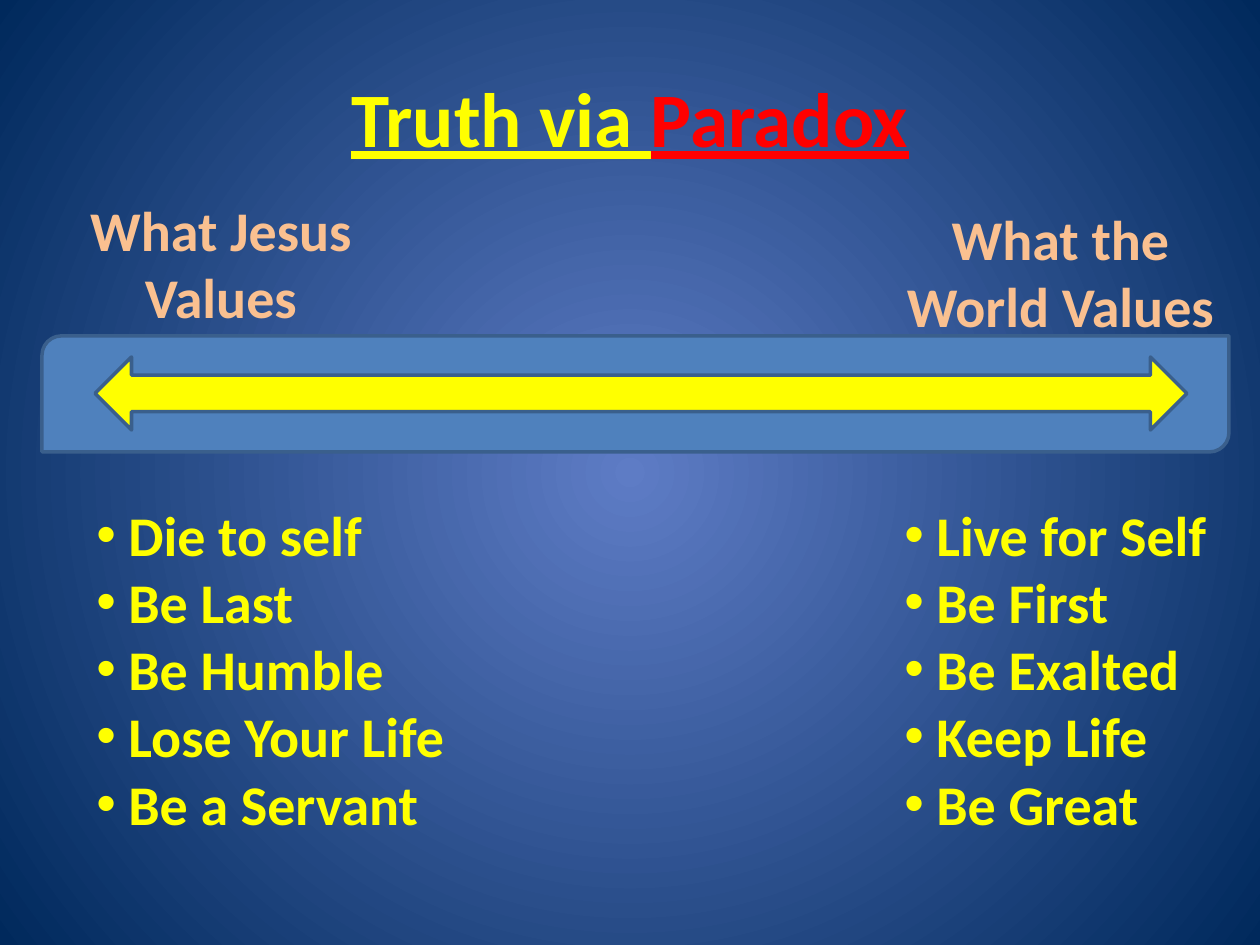
"""Build the slide that contrasts two sets of values along a double arrow."""
import dataclasses

import lxml.etree
import pptx
import pptx.dml.color
import pptx.enum.shapes
import pptx.enum.text
import pptx.oxml.ns
import pptx.util

EMU_PER_INCH = 914400
PX_PER_INCH = 126
FONT = "Calibri"
YELLOW, RED, PEACH = "FFFF00", "FF0000", "FAC090"
BLUE, EDGE, BLACK = "4F81BD", "3A5F8C", "000000"
GLOW, NAVY = "5E7CC5", "00295C"
BULLET_INDENT = 32

MSO_SHAPE = pptx.enum.shapes.MSO_SHAPE
ALIGN = pptx.enum.text.PP_ALIGN


@dataclasses.dataclass(frozen=True)
class Box:
    left: int
    top: int
    width: int
    height: int


@dataclasses.dataclass(frozen=True)
class Bar:
    kind: MSO_SHAPE
    box: Box
    fill: str


@dataclasses.dataclass(frozen=True)
class TextBlock:
    box: Box
    lines: tuple[str, ...]
    color: str
    bulleted: bool


BARS = (
    Bar(MSO_SHAPE.ROUND_2_DIAG_RECTANGLE, Box(42, 336, 1187, 116), BLUE),
    Bar(MSO_SHAPE.LEFT_RIGHT_ARROW, Box(95, 357, 1092, 73), YELLOW),
)
TEXT_BLOCKS = (
    TextBlock(
        Box(84, 494, 473, 352),
        ("Die to self", "Be Last", "Be Humble", "Lose Your Life", "Be a Servant"),
        YELLOW,
        True,
    ),
    TextBlock(
        Box(892, 494, 431, 391),
        ("Live for Self", "Be First", "Be Exalted", "Keep Life", "Be Great"),
        YELLOW,
        True,
    ),
    TextBlock(Box(32, 189, 378, 149), ("What Jesus Values",), PEACH, False),
    TextBlock(Box(882, 198, 357, 149), ("What the World Values",), PEACH, False),
)


def emu(px: int) -> pptx.util.Emu:
    return pptx.util.Emu(round(px * EMU_PER_INCH / PX_PER_INCH))


def place(box: Box) -> tuple[pptx.util.Emu, ...]:
    return tuple(emu(length) for length in dataclasses.astuple(box))


def rgb(color: str) -> pptx.dml.color.RGBColor:
    return pptx.dml.color.RGBColor.from_string(color)


def add_element(parent, tag: str, **attributes: str):
    return lxml.etree.SubElement(parent, pptx.oxml.ns.qn(tag), attributes)


def paint_background(slide) -> None:
    fill = slide.background.fill
    fill.gradient()
    for stop, color in zip(fill.gradient_stops, (GLOW, NAVY)):
        stop.color.rgb = rgb(color)
    linear = next(slide.element.iter(pptx.oxml.ns.qn("a:lin")))
    gradient = linear.getparent()
    gradient.remove(linear)
    circle = add_element(gradient, "a:path", path="circle")
    add_element(circle, "a:fillToRect", l="50000", t="50000", r="50000", b="50000")


def add_run(paragraph, text: str, size: int, color: str, underline: bool = False) -> None:
    run = paragraph.add_run()
    run.text = text
    font = run.font
    font.name, font.size, font.bold = FONT, pptx.util.Pt(size), True
    font.color.rgb = rgb(color)
    if underline:
        font.underline = True
    properties = run._r.get_or_add_rPr()
    outline = add_element(properties, "a:ln", w=str(pptx.util.Pt(0.75)))
    add_element(add_element(outline, "a:solidFill"), "a:srgbClr", val=BLACK)
    properties.insert(0, outline)


def add_bullet(paragraph) -> None:
    properties = paragraph._p.get_or_add_pPr()
    properties.set("marL", str(emu(BULLET_INDENT)))
    properties.set("indent", str(-emu(BULLET_INDENT)))
    add_element(properties, "a:buFont", typeface="Arial")
    add_element(properties, "a:buChar", char="•")


def fill_title(slide) -> None:
    title = slide.shapes.title
    title.left, title.top, title.width, title.height = place(Box(63, 38, 1134, 157))
    title.text_frame.vertical_anchor = pptx.enum.text.MSO_ANCHOR.MIDDLE
    paragraph = title.text_frame.paragraphs[0]
    paragraph.alignment = ALIGN.CENTER
    for text, color in (("Truth via ", YELLOW), ("Paradox", RED)):
        add_run(paragraph, text, 44, color, underline=True)


def draw_bar(slide, bar: Bar) -> None:
    shape = slide.shapes.add_shape(bar.kind, *place(bar.box))
    shape.shadow.inherit = False
    shape.fill.solid()
    shape.fill.fore_color.rgb = rgb(bar.fill)
    shape.line.color.rgb = rgb(EDGE)
    shape.line.width = pptx.util.Pt(2)


def draw_text(slide, block: TextBlock) -> None:
    frame = slide.shapes.add_textbox(*place(block.box)).text_frame
    frame.word_wrap = True
    frame.auto_size = pptx.enum.text.MSO_AUTO_SIZE.SHAPE_TO_FIT_TEXT
    for index, line in enumerate(block.lines):
        paragraph = frame.add_paragraph() if index else frame.paragraphs[0]
        if block.bulleted:
            add_bullet(paragraph)
        else:
            paragraph.alignment = ALIGN.CENTER
        add_run(paragraph, line, 32, block.color)


def main() -> None:
    presentation = pptx.Presentation()
    presentation.slide_width, presentation.slide_height = emu(1260), emu(945)
    slide = presentation.slides.add_slide(presentation.slide_layouts[5])
    paint_background(slide)
    fill_title(slide)
    for bar in BARS:
        draw_bar(slide, bar)
    for block in TEXT_BLOCKS:
        draw_text(slide, block)
    presentation.save("out.pptx")


if __name__ == "__main__":
    main()
